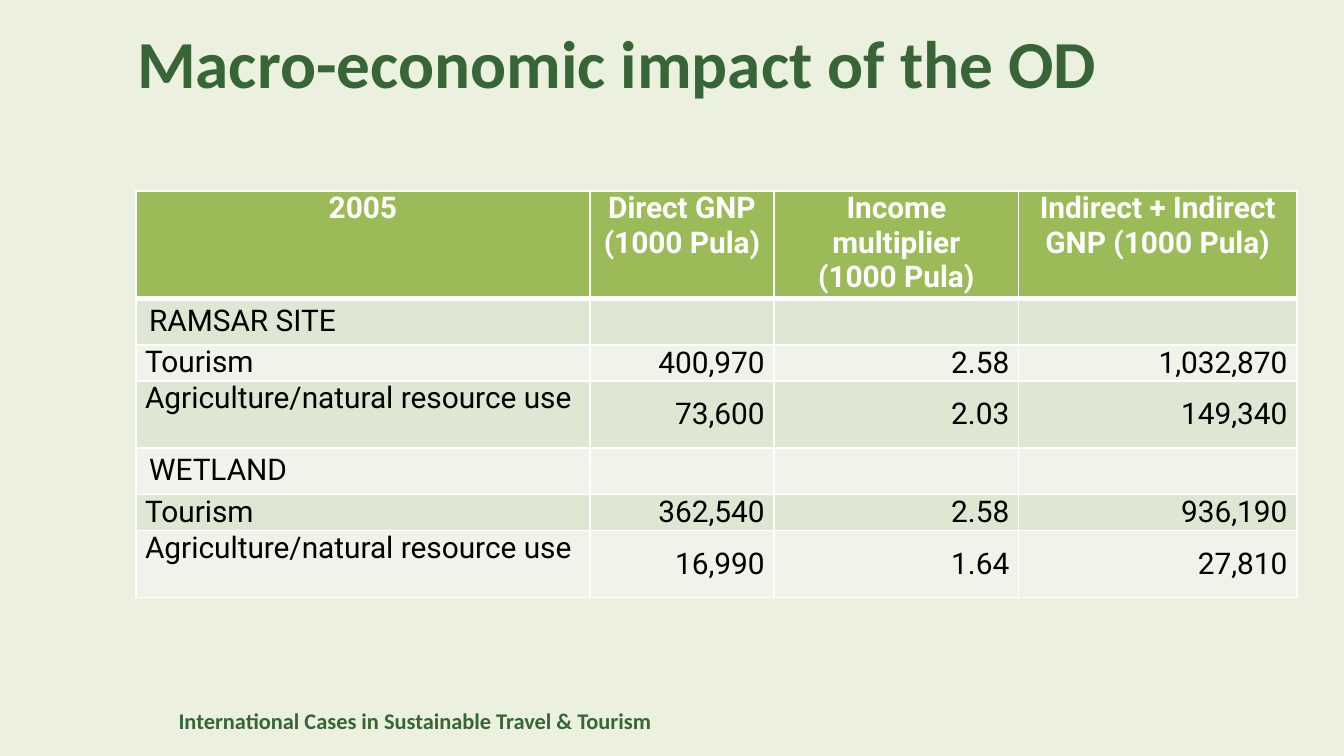
from lxml.etree import SubElement
from pptx import Presentation
from pptx.dml.color import RGBColor
from pptx.enum.text import MSO_ANCHOR as Anchor, MSO_AUTO_SIZE as AutoSize, PP_ALIGN as Align
from pptx.oxml.ns import qn
from pptx.util import Inches, Pt

TITLE = "Macro-economic impact of the OD"
FOOTER = "International Cases in Sustainable Travel & Tourism"
HEADERS = [
    ["2005"],
    ["Direct GNP", "(1000 Pula)"],
    ["Income multiplier", "(1000 Pula)"],
    ["Indirect + Indirect GNP (1000 Pula)"],
]
ROWS = [
    ["RAMSAR SITE", "", "", ""],
    ["Tourism", "400,970", "2.58", "1,032,870"],
    ["Agriculture/natural resource use", "73,600", "2.03", "149,340"],
    ["WETLAND", "", "", ""],
    ["Tourism", "362,540", "2.58", "936,190"],
    ["Agriculture/natural resource use", "16,990", "1.64", "27,810"],
]
COLUMN_WIDTHS = [3.38, 1.37, 1.82, 2.07]
ROW_HEIGHTS = [0.45, 0.3, 0.26, 0.5, 0.33, 0.26, 0.5]
GREEN, WHITE, BLACK = "376538", "FFFFFF", "000000"
HEADER_FILL, BAND_FILLS = "9BBB59", ["DEE7D1", "EFF3EA"]


def color(value):
    """Turn a hex string into a colour."""
    return RGBColor.from_string(value)


def write(frame, lines, size, name, ink, bold, align):
    """Fill a text frame with one paragraph per line."""
    for index, line in enumerate(lines):
        para = frame.add_paragraph() if index else frame.paragraphs[0]
        para.alignment = align
        span = para.add_run()
        span.text = line
        font = span.font
        font.size, font.name, font.bold = Pt(size), name, bold
        font.color.rgb = color(ink)


def set_borders(cell, bottom):
    """Draw white borders, with the bottom one at its own width."""
    properties = cell._tc.get_or_add_tcPr()
    for side, width in zip("LRTB", [1, 1, 1, bottom]):
        line = SubElement(properties, qn(f"a:ln{side}"), w=str(Pt(width)))
        SubElement(SubElement(line, qn("a:solidFill")), qn("a:srgbClr"), val=WHITE)


def format_cell(cell, lines, fill, ink, align, header=False, heading=False):
    """Give a table cell its borders, fill, margins and text."""
    set_borders(cell, 3 if header else 1)
    cell.fill.solid()
    cell.fill.fore_color.rgb = color(fill)
    cell.margin_left = cell.margin_right = Inches(0.1 if heading else 0.07)
    cell.margin_top = cell.margin_bottom = Inches(0.04 if heading else 0)
    cell.vertical_anchor = Anchor.MIDDLE if align == Align.RIGHT else Anchor.TOP
    if any(lines):
        write(cell.text_frame, lines, 16, "Roboto", ink, header, align)


def add_impact_table(page):
    """Add the table of direct and indirect GNP."""
    table = page.shapes.add_table(
        len(ROW_HEIGHTS), len(COLUMN_WIDTHS), Inches(1.01), Inches(1.42),
        Inches(sum(COLUMN_WIDTHS)), Inches(sum(ROW_HEIGHTS))).table
    for column, width in zip(table.columns, COLUMN_WIDTHS):
        column.width = Inches(width)
    for row, height in zip(table.rows, ROW_HEIGHTS):
        row.height = Inches(height)
    for x, lines in enumerate(HEADERS):
        format_cell(table.cell(0, x), lines, HEADER_FILL, WHITE, Align.CENTER, header=True)
    for y, values in enumerate(ROWS):
        for x, value in enumerate(values):
            heading = x == 0 and not any(values[1:])
            align = Align.RIGHT if x else Align.LEFT
            format_cell(table.cell(y + 1, x), [value], BAND_FILLS[y % 2], BLACK,
                        align, heading=heading)


def main():
    """Build and save the deck."""
    deck = Presentation()
    deck.slide_width, deck.slide_height = Inches(10), Inches(10) * 9 // 16
    page = deck.slides.add_slide(deck.slide_layouts[5])
    page.background.fill.solid()
    page.background.fill.fore_color.rgb = color("EBF1DE")

    footer = page.shapes.add_textbox(Inches(1.23), Inches(5.21), Inches(5.81), Inches(0.3))
    footer.text_frame.word_wrap = True
    write(footer.text_frame, [FOOTER], 12, "Calibri", GREEN, True, Align.LEFT)

    title = page.shapes.title
    title.left, title.top = Inches(0.92), Inches(0.19)
    title.width, title.height = Inches(8.75), Inches(0.54)
    title.text_frame.auto_size = AutoSize.NONE
    title.text_frame.vertical_anchor = Anchor.MIDDLE
    write(title.text_frame, [TITLE], 36, "Calibri", GREEN, True, Align.LEFT)

    add_impact_table(page)
    deck.save("out.pptx")


if __name__ == "__main__":
    main()
